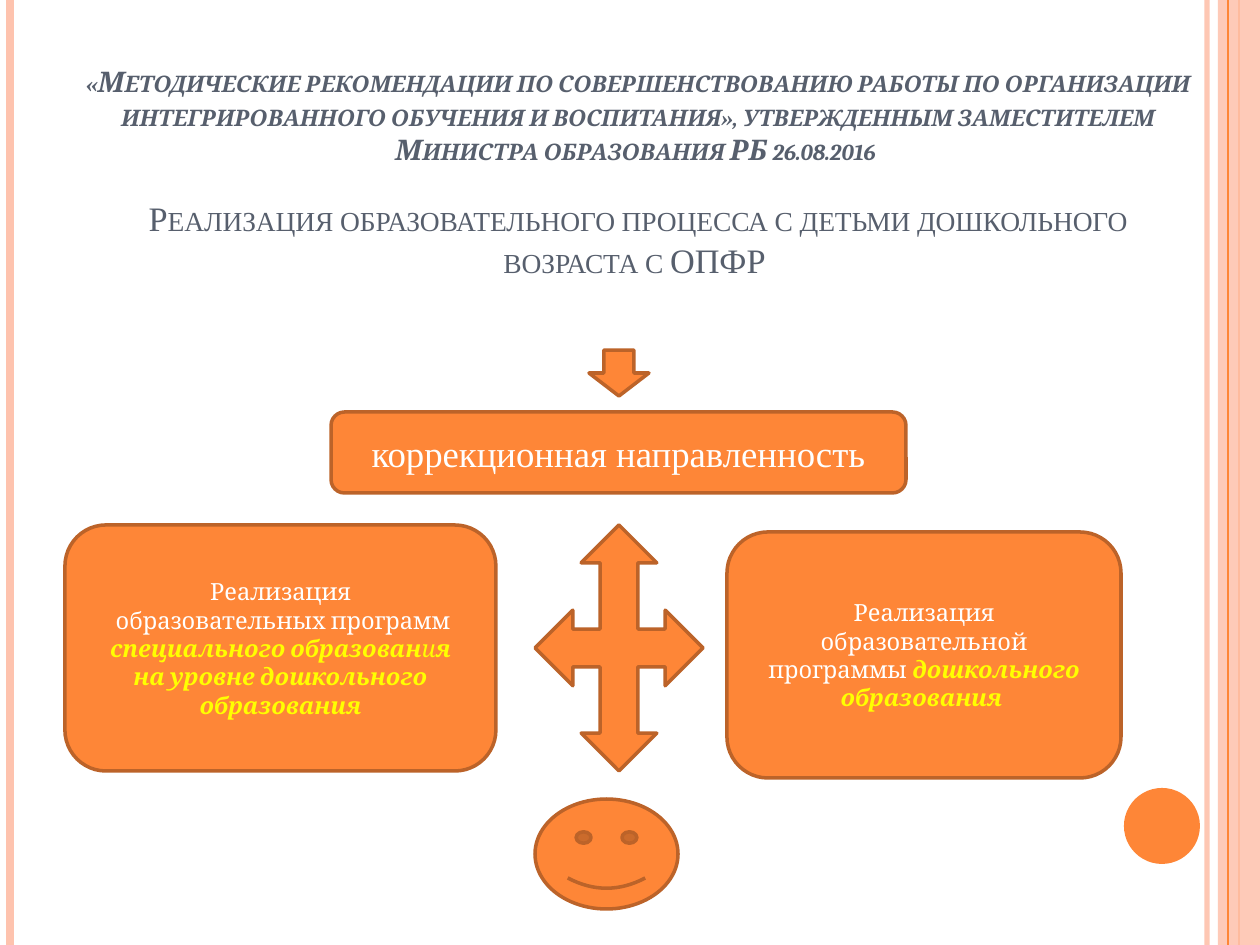
from pptx import Presentation
from pptx import util as u
from pptx.dml.color import RGBColor
from pptx.enum import shapes, text
from pptx.oxml import ns
from lxml import etree

SCALE = 914400 / 126
ORANGE = RGBColor(0xFE, 0x86, 0x37)
PEACH = RGBColor(0xFE, 0xC3, 0xAE)
BROWN = RGBColor(0xBC, 0x63, 0x29)
SLATE = RGBColor(0x57, 0x5F, 0x6D)
WHITE = RGBColor(0xFF, 0xFF, 0xFF)
YELLOW = RGBColor(0xFF, 0xFF, 0x00)
SERIF, TIMES = "Cambria", "Times New Roman"


def px(*lengths):
    return [u.Emu(round(length * SCALE)) for length in lengths]


def write(frame, paragraphs):
    for index, spans in enumerate(paragraphs):
        para = frame.paragraphs[0] if index == 0 else frame.add_paragraph()
        para.alignment = text.PP_ALIGN.CENTER
        for words, size, name, color, formats in spans:
            span = para.add_run()
            span.text = words
            span.font.color.rgb = color
            for key, value in {"size": u.Pt(size), "name": name, **formats}.items():
                setattr(span.font, key, value)


deck = Presentation()
deck.slide_width, deck.slide_height = px(1260, 945)
page = deck.slides.add_slide(deck.slide_layouts[5])

kinds = shapes.MSO_SHAPE
decor = [
    ("line", 1207, PEACH, 3, 93),
    ("line", 10, PEACH, 4.5, 100),
    ("line", 1239, ORANGE, 1.5, 100),
    (kinds.RECTANGLE, (1218, 0, 42, 945), PEACH, 0, 87),
    ("line", 1228, ORANGE, 0.75, 100),
    (kinds.OVAL, (1124, 788, 76, 76), ORANGE, 0, 100),
]
for kind, place, color, width, opacity in decor:
    if kind == "line":
        item = page.shapes.add_connector(shapes.MSO_CONNECTOR.STRAIGHT, *px(place, 0, place, 945))
        item.line.color.rgb = color
        item.line.width = u.Pt(width)
        etree.SubElement(item.element.spPr, ns.qn("a:effectLst"))
    else:
        item = page.shapes.add_shape(kind, *px(*place))
        item.shadow.inherit = False
        item.fill.solid()
        item.fill.fore_color.rgb = color
        item.line.fill.background()
    if opacity < 100:
        tint = next(item.element.spPr.iter(ns.qn("a:srgbClr")))
        etree.SubElement(tint, ns.qn("a:alpha")).set("val", str(opacity * 1000))

title = page.shapes.title
title.left, title.top, title.width, title.height = px(70, 57, 1136, 267)
frame = title.text_frame
frame_formats = {
    "word_wrap": True,
    "auto_size": text.MSO_AUTO_SIZE.NONE,
    "vertical_anchor": text.MSO_ANCHOR.BOTTOM,
    "margin_bottom": px(44)[0],
}
for key, value in frame_formats.items():
    setattr(frame, key, value)
strong = {"bold": True, "italic": True}
write(frame, [
    [("«Методические рекомендации по совершенствованию работы по организации "
      "интегрированного обучения и воспитания», утвержденным заместителем "
      "Министра образования РБ 26.08.2016 ", 16.2, SERIF, SLATE, strong)],
    [("Реализация образовательного процесса с детьми дошкольного возраста с ОПФР ",
      19.6, TIMES, SLATE, {"bold": False, "italic": False})],
])
frame.paragraphs[0].space_after = u.Pt(18)
for para in frame.paragraphs:
    for span in para.runs:
        span.font._element.set("cap", "small")

plain = (13.5, SERIF, WHITE, {})
accent = (13.5, SERIF, YELLOW, strong)
light = (13.5, SERIF, YELLOW, {"bold": False, "italic": True})
diagram = [
    (kinds.ROUNDED_RECTANGLE, (331, 412, 575, 81),
     [[("коррекционная направленность", 21, TIMES, WHITE, {})]]),
    (kinds.ROUNDED_RECTANGLE, (65, 525, 431, 246), [
        [("Реализация", *plain)],
        [(" образовательных программ ", *plain), ("специального образован", *accent),
         ("и", *light), ("я", *accent)],
        [("на уровне дошкольного образования", *accent)],
    ]),
    (kinds.ROUNDED_RECTANGLE, (727, 532, 394, 246), [
        [("Реализация", *plain)],
        [("образовательной программы ", *plain), ("дошкольного образования ", *accent)],
    ]),
    (kinds.QUAD_ARROW, (535, 525, 168, 246), []),
    (kinds.SMILEY_FACE, (535, 799, 143, 110), []),
    (kinds.DOWN_ARROW, (589, 350, 60, 46), []),
]
for kind, place, paragraphs in diagram:
    box = page.shapes.add_shape(kind, *px(*place))
    box.shadow.inherit = False
    box.fill.solid()
    box.fill.fore_color.rgb = ORANGE
    box.line.color.rgb = BROWN
    box.line.width = u.Pt(2)
    box.text_frame.word_wrap = True
    box.text_frame.vertical_anchor = text.MSO_ANCHOR.MIDDLE
    write(box.text_frame, paragraphs)

deck.save("out.pptx")
